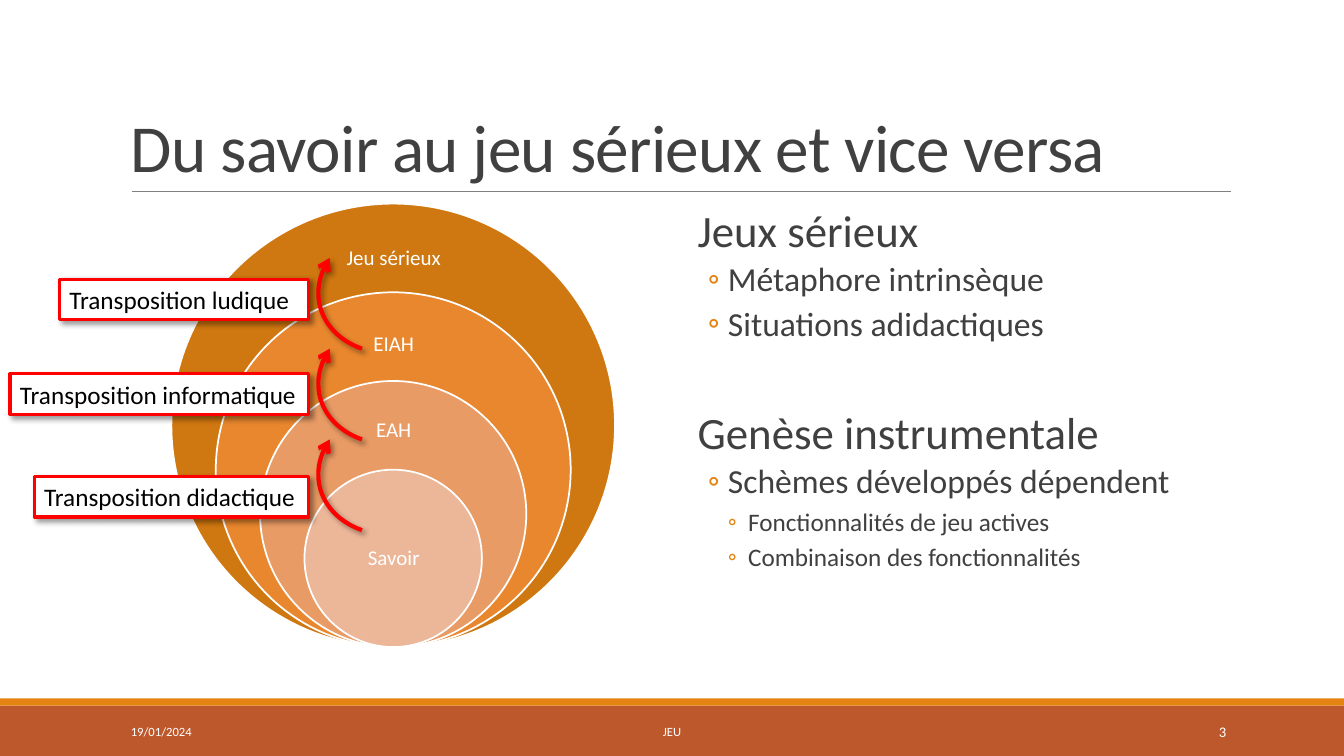
from lxml.etree import SubElement
from pptx import Presentation
from pptx.dml.color import RGBColor
from pptx.enum.shapes import MSO_CONNECTOR, MSO_SHAPE
from pptx.enum.text import MSO_ANCHOR, PP_ALIGN
from pptx.oxml.ns import qn
from pptx.util import Pt

PX = 9144
WHITE = RGBColor(0xFF, 0xFF, 0xFF)
BLACK = RGBColor(0x00, 0x00, 0x00)
INK = RGBColor(0x40, 0x40, 0x40)
GRAY = RGBColor(0x80, 0x80, 0x80)
RED = RGBColor(0xFF, 0x00, 0x00)
ORANGE = RGBColor(0xE4, 0x83, 0x12)
RUST = RGBColor(0xBD, 0x58, 0x2C)

LAYERS = [
    ("Jeu sérieux", RGBColor(0xCF, 0x77, 0x10), 22, 66),
    ("EIAH", RGBColor(0xE8, 0x87, 0x2E), 109, 63),
    ("EAH", RGBColor(0xE8, 0x9B, 0x65), 196, 59),
    ("Savoir", RGBColor(0xEC, 0xB6, 0x98), 308, 88),
]
TRANSPOSITIONS = [
    ("Transposition didactique", 271, 272),
    ("Transposition informatique", 169, 296),
    ("Transposition ludique", 75, 247),
]
OUTLINE = [
    ("Jeux sérieux", 0, 12),
    ("Métaphore intrinsèque", 1, 2),
    ("Situations adidactiques", 1, 2),
    ("Genèse instrumentale", 0, 44),
    ("Schèmes développés dépendent", 1, 2),
    ("Fonctionnalités de jeu actives", 2, 2),
    ("Combinaison des fonctionnalités", 2, 2),
]
LEVEL_SIZES = [32, 24, 18]
LEVEL_MARGINS = [12, 42, 62]


def emu(*lengths):
    return [round(length * PX) for length in lengths]


def write(frame, text, size, color, align=PP_ALIGN.LEFT, line_spacing=1.0,
          before=0, after=0, tracking=0):
    paragraph = frame.paragraphs[0] if not frame.text else frame.add_paragraph()
    paragraph.alignment = align
    paragraph.line_spacing = line_spacing
    paragraph.space_before = Pt(before)
    paragraph.space_after = Pt(after)
    run = paragraph.add_run()
    run.text = text
    run.font.name = "Calibri"
    run.font.size = Pt(size)
    run.font.color.rgb = color
    if tracking:
        run.font._element.set("spc", str(tracking))
    return paragraph


def set_frame(shape, anchor, insets=(10, 5)):
    frame = shape.text_frame
    frame.word_wrap = True
    frame.vertical_anchor = anchor
    frame.margin_left = frame.margin_right = insets[0] * PX
    frame.margin_top = frame.margin_bottom = insets[1] * PX
    return frame


def add_text_frame(slide, box, anchor, insets=(10, 5)):
    return set_frame(slide.shapes.add_textbox(*emu(*box)), anchor, insets)


def add_filled(slide, kind, box, fill, line=None, width=0):
    shape = slide.shapes.add_shape(kind, *emu(*box))
    shape.shadow.inherit = False
    shape.fill.solid()
    shape.fill.fore_color.rgb = fill
    if line is None:
        shape.line.fill.background()
    else:
        shape.line.color.rgb = line
        shape.line.width = Pt(width)
    return shape


def add_drop_shadow(shape):
    shape.shadow.inherit = False
    effects = shape._element.spPr.find(qn("a:effectLst"))
    shadow = SubElement(effects, qn("a:outerShdw"), blurRad=str(Pt(4)),
                        dist=str(Pt(3)), dir="2700000", algn="tl", rotWithShape="0")
    color = SubElement(shadow, qn("a:srgbClr"), val=str(BLACK))
    SubElement(color, qn("a:alpha"), val="40000")


def add_bullet(paragraph, margin):
    properties = paragraph._p.get_or_add_pPr()
    properties.set("marL", str(margin * PX))
    properties.set("indent", str(-20 * PX))
    color = SubElement(properties, qn("a:buClr"))
    SubElement(color, qn("a:srgbClr"), val=str(ORANGE))
    SubElement(properties, qn("a:buFont"), typeface="Calibri")
    SubElement(properties, qn("a:buChar"), char="◦")


def add_title(slide, left, top, width, height):
    rule_left, rule_right, rule_top = left + 11, left + width + 1, top + height
    rule = slide.shapes.add_connector(
        MSO_CONNECTOR.STRAIGHT, *emu(rule_left, rule_top, rule_right, rule_top))
    rule.line.color.rgb = GRAY
    rule.line.width = Pt(0.5)
    SubElement(rule._element.spPr, qn("a:effectLst"))
    frame = add_text_frame(slide, (left, top, width, height), MSO_ANCHOR.BOTTOM)
    write(frame, "Du savoir au jeu sérieux et vice versa", 48, INK,
          line_spacing=0.85, tracking=-50)


def add_nested_circles(slide, left, top, size):
    step = size // 5
    for index, (label, color, label_top, label_height) in enumerate(LAYERS):
        diameter = size - index * step
        circle = (left + (size - diameter) // 2, top + size - diameter, diameter, diameter)
        add_filled(slide, MSO_SHAPE.OVAL, circle, color, WHITE, 1.25)
        frame = add_text_frame(slide, (left + size // 2 - 61, top + label_top, 123, label_height),
                               MSO_ANCHOR.MIDDLE, (12, 12))
        write(frame, label, 15, WHITE, PP_ALIGN.CENTER, line_spacing=0.9)


def add_curved_arrow(slide, left, top, width, height):
    controls = [(left + width, top + height), (left + 3, top + height - 14),
                (left - 13, top + height - 54), (left + 11, top)]
    steps = 24
    points = []
    for step in range(steps + 1):
        t = step / steps
        weights = [(1 - t) ** 3, 3 * t * (1 - t) ** 2, 3 * t ** 2 * (1 - t), t ** 3]
        points.append(tuple(sum(weight * point[axis] for weight, point in zip(weights, controls))
                            for axis in (0, 1)))
    builder = slide.shapes.build_freeform(*emu(*points[0]), scale=1.0)
    builder.add_line_segments([emu(*point) for point in points[1:]], close=False)
    arrow = builder.convert_to_shape()
    arrow.fill.background()
    arrow.line.color.rgb = RED
    arrow.line.width = Pt(3)
    SubElement(arrow.line._get_or_add_ln(), qn("a:tailEnd"), type="arrow")
    add_drop_shadow(arrow)


def add_transpositions(slide, right, top):
    for index in range(len(TRANSPOSITIONS)):
        add_curved_arrow(slide, right + 10, top + 234 - index * 90, 43, 90)
    for label, offset, width in TRANSPOSITIONS:
        tag = add_filled(slide, MSO_SHAPE.RECTANGLE, (right - width, top + offset, width, 40),
                         WHITE, RED, 2.25)
        add_drop_shadow(tag)
        write(set_frame(tag, MSO_ANCHOR.TOP), label, 18, BLACK)


def add_outline(slide, left, top, width, height):
    frame = add_text_frame(slide, (left, top, width, height), MSO_ANCHOR.TOP, (0, 5))
    for text, level, before in OUTLINE:
        paragraph = write(frame, text, LEVEL_SIZES[level], INK, line_spacing=0.9,
                          before=before, after=4 if level else 2)
        paragraph.level = level
        if level:
            add_bullet(paragraph, LEVEL_MARGINS[level])
        else:
            paragraph._p.get_or_add_pPr().set("marL", str(LEVEL_MARGINS[0] * PX))


def add_footer(slide, left, top, width, height):
    add_filled(slide, MSO_SHAPE.RECTANGLE, (left, top + 7, width, height - 7), RUST)
    add_filled(slide, MSO_SHAPE.RECTANGLE, (left, top, width, 7), ORANGE)
    fields = [("19/01/2024", 120, 270, 9, PP_ALIGN.LEFT),
              ("JEU", 403, 527, 9, PP_ALIGN.CENTER),
              ("3", 1083, 143, 10.5, PP_ALIGN.RIGHT)]
    for text, offset, field_width, size, align in fields:
        frame = add_text_frame(slide, (left + offset, top + 13, field_width, 40),
                               MSO_ANCHOR.MIDDLE)
        write(frame, text, size, WHITE, align)


def main():
    presentation = Presentation()
    presentation.slide_width, presentation.slide_height = emu(1333, 750)
    slide = presentation.slides.add_slide(presentation.slide_layouts[6])
    add_footer(slide, 0, 693, 1333, 57)
    add_title(slide, 120, 31, 1100, 159)
    add_nested_circles(slide, 170, 202, 440)
    add_outline(slide, 680, 202, 540, 440)
    add_transpositions(slide, 306, 202)
    presentation.save("out.pptx")


if __name__ == "__main__":
    main()
